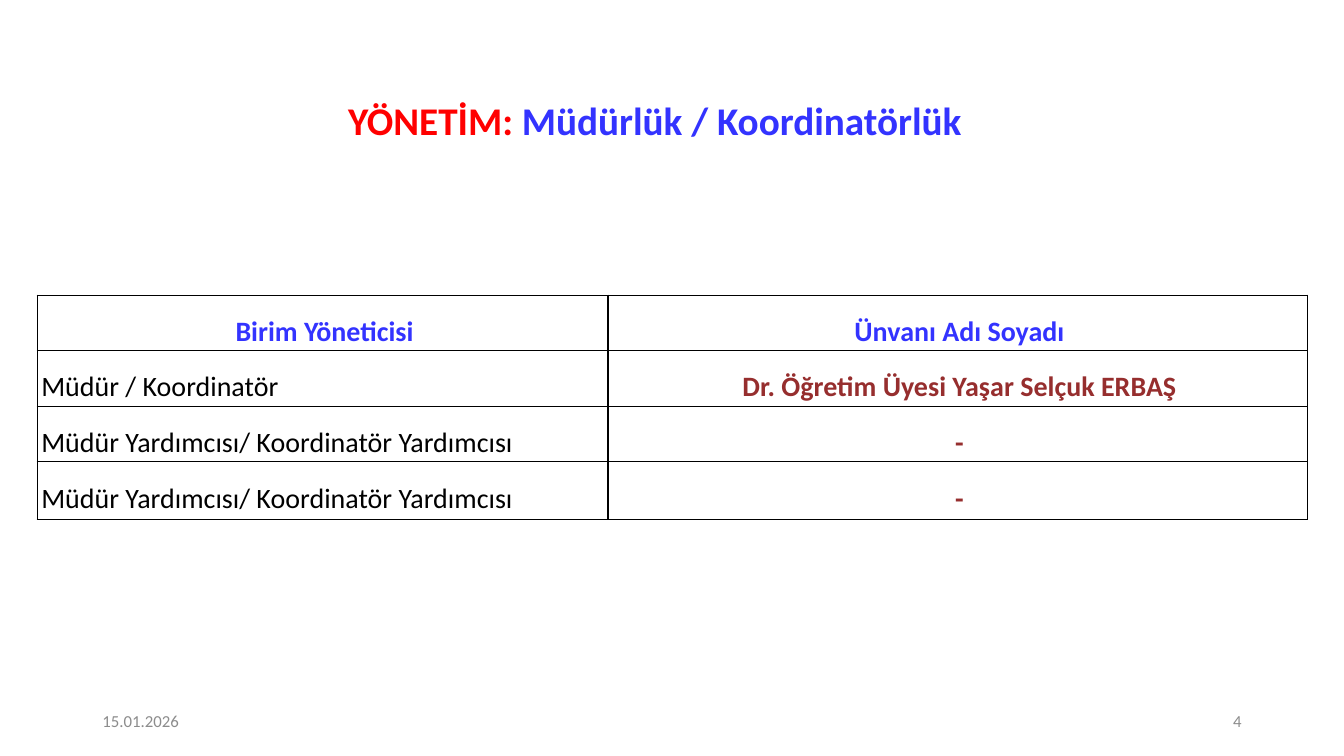
from lxml.etree import SubElement
from pptx import Presentation
from pptx.dml.color import RGBColor
from pptx.enum.text import MSO_ANCHOR, MSO_AUTO_SIZE, PP_ALIGN
from pptx.oxml.ns import qn
from pptx.util import Cm, Pt

COLOURS = {
    "red": "FF0000",
    "blue": "3333FF",
    "maroon": "962E2E",
    "black": "000000",
    "white": "FFFFFF",
    "grey": "8C8C8C",
}
FONT = "Calibri"
HEADINGS = ("Birim Yöneticisi", "Ünvanı Adı Soyadı")
MANAGERS = (
    ("Müdür / Koordinatör", "Dr. Öğretim Üyesi Yaşar Selçuk ERBAŞ"),
    ("Müdür Yardımcısı/ Koordinatör Yardımcısı", "-"),
    ("Müdür Yardımcısı/ Koordinatör Yardımcısı", "-"),
)
COLUMN_WIDTHS = (14.38, 17.62)
ROW_HEIGHTS = (1.4, 1.4, 1.4, 1.45)


def add_text(para, text, size=20, colour="black", bold=False, align=PP_ALIGN.LEFT, spacing=None):
    """Append a formatted span of text to a paragraph."""
    para.alignment = align
    if spacing:
        para.line_spacing = spacing
    span = para.add_run()
    span.text = text
    span.font.name = FONT
    span.font.size = Pt(size)
    span.font.bold = bold
    span.font.color.rgb = RGBColor.from_string(COLOURS[colour])


def draw_title(page, left, top, width, height):
    """Place the two-coloured heading in the title placeholder."""
    title = page.shapes.title
    title.left, title.top, title.width, title.height = Cm(left), Cm(top), Cm(width), Cm(height)
    frame = title.text_frame
    frame.auto_size = MSO_AUTO_SIZE.NONE
    frame.vertical_anchor = MSO_ANCHOR.MIDDLE
    for text, colour in (("YÖNETİM: ", "red"), ("Müdürlük / Koordinatörlük", "blue")):
        add_text(frame.paragraphs[0], text, size=28, colour=colour, bold=True,
                 align=PP_ALIGN.CENTER, spacing=0.9)


def outline_cell(cell):
    """Give a cell a thin black border on all four sides."""
    properties = cell._tc.get_or_add_tcPr()
    for side in ("a:lnL", "a:lnR", "a:lnT", "a:lnB"):
        line = SubElement(properties, qn(side), w=str(Pt(1)))
        fill = SubElement(line, qn("a:solidFill"))
        SubElement(fill, qn("a:srgbClr"), val=COLOURS["black"])


def fill_cell(cell, text, **text_format):
    """Format one table cell and write its text."""
    outline_cell(cell)
    cell.fill.solid()
    cell.fill.fore_color.rgb = RGBColor.from_string(COLOURS["white"])
    cell.margin_left = cell.margin_right = cell.margin_top = cell.margin_bottom = 0
    cell.vertical_anchor = MSO_ANCHOR.MIDDLE
    para = cell.text_frame.paragraphs[0]
    para._p.get_or_add_pPr().set("marL", str(Cm(0.1)))
    add_text(para, text, spacing=1.5, **text_format)


def draw_managers(page, left, top):
    """Place the table of managers with its top left corner at the given point."""
    rows = (HEADINGS, *MANAGERS)
    frame = page.shapes.add_table(len(rows), len(HEADINGS), Cm(left), Cm(top),
                                  Cm(sum(COLUMN_WIDTHS)), Cm(sum(ROW_HEIGHTS)))
    table = frame.table
    for column, width in zip(table.columns, COLUMN_WIDTHS):
        column.width = Cm(width)
    for row, height in zip(table.rows, ROW_HEIGHTS):
        row.height = Cm(height)
    heading_format = {"colour": "blue", "bold": True, "align": PP_ALIGN.CENTER}
    name_format = {**heading_format, "colour": "maroon"}
    for row_index, texts in enumerate(rows):
        formats = ({}, name_format) if row_index else (heading_format, heading_format)
        for column_index, (text, text_format) in enumerate(zip(texts, formats)):
            fill_cell(table.cell(row_index, column_index), text, **text_format)


def draw_footer(page, left, top, width, height):
    """Place the date at the left end and the page number at the right end."""
    box_width = 7.62
    entries = (
        ("15.01.2026", left, PP_ALIGN.LEFT),
        ("4", left + width - box_width, PP_ALIGN.RIGHT),
    )
    for text, box_left, align in entries:
        box = page.shapes.add_textbox(Cm(box_left), Cm(top), Cm(box_width), Cm(height))
        frame = box.text_frame
        frame.word_wrap = True
        frame.vertical_anchor = MSO_ANCHOR.MIDDLE
        add_text(frame.paragraphs[0], text, size=12, colour="grey", align=align)


def main():
    """Build the management slide and save the deck."""
    deck = Presentation()
    deck.slide_width, deck.slide_height = Cm(33.87), Cm(19.05)
    page = deck.slides.add_slide(deck.slide_layouts[5])
    draw_title(page, 2.9, 2.13, 27.2, 1.93)
    draw_managers(page, 0.94, 7.44)
    draw_footer(page, 2.33, 17.66, 29.21, 1.01)
    deck.save("out.pptx")


if __name__ == "__main__":
    main()
